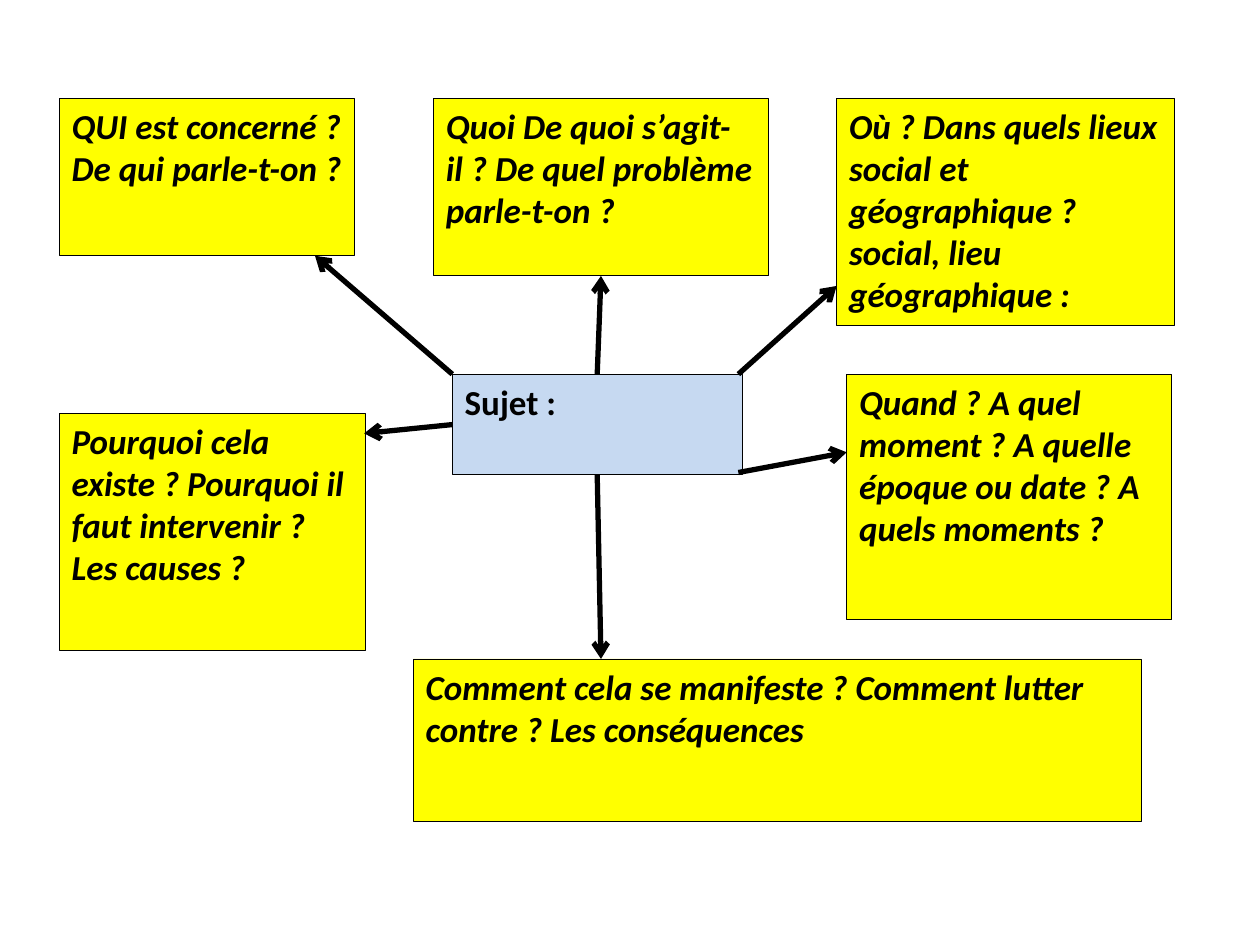
"""Build a mind map of the questions to ask about a subject."""
import pptx
import pptx.dml.color
import pptx.enum.shapes
import pptx.enum.text
import pptx.oxml.ns
import pptx.util
from lxml import etree

Inches, Pt = pptx.util.Inches, pptx.util.Pt

YELLOW, BLUE, BLACK = "FFFF00", "C6D9F1", "000000"
QUESTION_FONT = {"name": "Calibri", "size": Pt(20), "bold": True, "italic": True}
SUBJECT_FONT = {**QUESTION_FONT, "italic": False}
FRAME_FORMAT = {
    "word_wrap": True,
    "vertical_anchor": pptx.enum.text.MSO_ANCHOR.TOP,
    "margin_left": Inches(0.1),
    "margin_right": Inches(0.1),
    "margin_top": Inches(0.05),
    "margin_bottom": Inches(0.05),
}
PARAGRAPH_FORMAT = {"alignment": pptx.enum.text.PP_ALIGN.LEFT, "space_after": Pt(10)}

SUBJECT = ("Sujet :", (3.59, 2.97, 2.3, 0.8))
QUESTIONS = [
    ("QUI est concerné ? De qui parle-t-on ?", (0.47, 0.78, 2.34, 1.25)),
    ("Quoi De quoi s’agit-il ? De quel problème parle-t-on ?", (3.44, 0.78, 2.66, 1.41)),
    ("Où ? Dans quels lieux social et géographique ? social, lieu géographique :",
     (6.64, 0.78, 2.68, 1.8)),
    ("Pourquoi cela existe ? Pourquoi il faut intervenir ? Les causes ?",
     (0.47, 3.28, 2.43, 1.88)),
    ("Quand ? A quel moment ? A quelle époque ou date ? A quels moments ? ",
     (6.72, 2.97, 2.58, 1.95)),
    ("Comment cela se manifeste ? Comment lutter contre ? Les conséquences",
     (3.28, 5.23, 5.78, 1.29)),
]
ARROWS = [
    ((3.59, 2.97), (2.5, 2.03)),
    ((4.74, 2.97), (4.77, 2.19)),
    ((4.74, 3.77), (4.77, 5.23)),
    ((5.86, 2.97), (6.64, 2.27)),
    ((5.86, 3.75), (6.72, 3.59)),
    ((3.59, 3.37), (2.89, 3.44)),
]


def apply(target, values):
    for name, value in values.items():
        setattr(target, name, value)


def paint(fill, color):
    fill.solid()
    fill.fore_color.rgb = pptx.dml.color.RGBColor.from_string(color)


def add_box(page, text, area, color, font):
    box = page.shapes.add_shape(
        pptx.enum.shapes.MSO_SHAPE.RECTANGLE, *map(Inches, area))
    box.shadow.inherit = False
    paint(box.fill, color)
    paint(box.line.fill, BLACK)
    box.line.width = Pt(0.5)
    apply(box.text_frame, FRAME_FORMAT)
    para = box.text_frame.paragraphs[0]
    apply(para, PARAGRAPH_FORMAT)
    span = para.add_run()
    span.text = text
    apply(span.font, font)
    paint(span.font.fill, BLACK)


def add_arrow(page, start, end):
    arrow = page.shapes.add_connector(
        pptx.enum.shapes.MSO_CONNECTOR.STRAIGHT, *map(Inches, start + end))
    paint(arrow.line.fill, BLACK)
    arrow.line.width = Pt(3)
    qn = pptx.oxml.ns.qn
    properties = arrow.element.spPr
    etree.SubElement(properties.find(qn("a:ln")), qn("a:tailEnd"), type="arrow")
    etree.SubElement(properties, qn("a:effectLst"))


def main():
    deck = pptx.Presentation()
    deck.slide_width, deck.slide_height = Inches(10), Inches(7.5)
    page = deck.slides.add_slide(deck.slide_layouts[6])
    add_box(page, *SUBJECT, BLUE, SUBJECT_FONT)
    for text, area in QUESTIONS:
        add_box(page, text, area, YELLOW, QUESTION_FONT)
    for start, end in ARROWS:
        add_arrow(page, start, end)
    deck.save("out.pptx")


if __name__ == "__main__":
    main()
